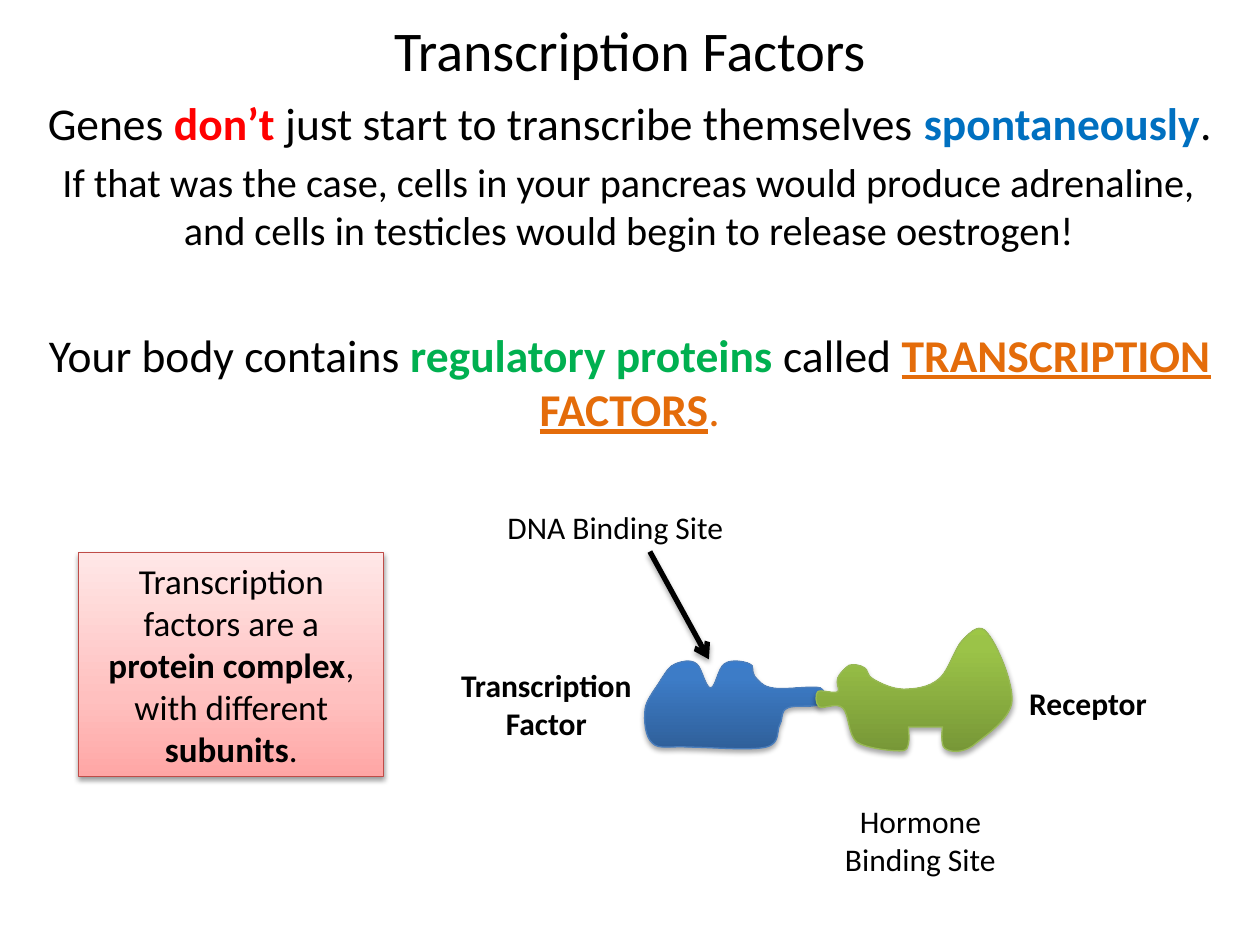
from dataclasses import dataclass
from typing import NamedTuple, Optional

import pptx
import pptx.dml.color
import pptx.enum.shapes
import pptx.enum.text
import pptx.oxml.ns
import pptx.util
from lxml import etree

Cm = pptx.util.Cm
Pt = pptx.util.Pt
qn = pptx.oxml.ns.qn
UNIT = Cm(2.54) // 100


@dataclass(frozen=True)
class Theme:
    font: str = "Calibri"
    ink: str = "000000"
    red: str = "FF0000"
    blue: str = "0070C0"
    green: str = "00B050"
    orange: str = "E46C0A"
    title: int = 32
    lead: int = 26
    detail: int = 23
    note: int = 20
    label: int = 18


THEME = Theme()


class Span(NamedTuple):
    text: str
    color: str = THEME.ink
    bold: Optional[bool] = False
    underline: Optional[bool] = False


class Line(NamedTuple):
    spans: list[Span]
    size: int
    before: float


class Label(NamedTuple):
    text: str
    left: float
    top: float
    height: float
    bold: bool


class Finish(NamedTuple):
    stops: list[tuple[int, str]]
    line: str
    shadow_alpha: int = 35
    shadow_distance: float = 1.8


class Protein(NamedTuple):
    frame: tuple[int, int, int, int]
    start: tuple[int, int]
    segments: list[tuple[int, ...]]
    finish: Finish


BODY = [
    Line([Span("Genes "), Span("don’t", THEME.red, True),
          Span(" just start to transcribe themselves "),
          Span("spontaneously", THEME.blue, True), Span(".")], THEME.lead, 5.2),
    Line([Span("If that was the case, cells in your pancreas would produce adrenaline, "
               "and cells in testicles would begin to release oestrogen!")], THEME.detail, 4.6),
    Line([Span("Your body contains "), Span("regulatory proteins ", THEME.green, True),
          Span("called "), Span("TRANSCRIPTION FACTORS", THEME.orange, True, True),
          Span(".", THEME.orange)], THEME.lead, 41.8),
]
NOTE = [Span("Transcription factors are a "), Span("protein complex", bold=True),
        Span(", with different "), Span("subunits", bold=True), Span(".")]
NOTE_FINISH = Finish([(0, "FFA6A5"), (35, "FFC0BF"), (100, "FFE7E7")], "BF4C48", 38, 1.6)
LABELS = [
    Label("DNA Binding Site", 9.93, 10.11, 1.02, False),
    Label("Receptor", 19.46, 13.67, 1.02, True),
    Label("Transcription Factor", 8.54, 13.3, 1.8, True),
    Label("Hormone Binding Site", 16.08, 16.05, 1.8, False),
]
FACTOR = Protein((511, 523, 147, 73), (651, 546), [
    (645, 544, 622, 548, 613, 546), (605, 545, 602, 540, 599, 537),
    (596, 533, 599, 528, 595, 527), (591, 525, 580, 523, 575, 527),
    (570, 530, 568, 546, 564, 546), (560, 546, 557, 530, 553, 527),
    (548, 523, 541, 525, 536, 527), (531, 529, 529, 533, 525, 539),
    (521, 546, 513, 555, 512, 563), (511, 572, 512, 585, 518, 590),
    (523, 595, 532, 592, 547, 593), (562, 593, 596, 596, 608, 593),
    (620, 590, 616, 580, 619, 575), (622, 569, 619, 565, 625, 562),
    (630, 559, 646, 562, 650, 559), (654, 557, 657, 549, 651, 546),
], Finish([(0, "2F5F99"), (80, "3D7CC7"), (100, "3A7CCB")], "4B7EBC"))
RECEPTOR = Protein((647, 494, 158, 103), (649, 549), [
    (651, 547, 662, 551, 665, 549), (667, 547, 663, 542, 665, 538),
    (666, 535, 671, 530, 674, 528), (678, 527, 683, 528, 686, 530),
    (689, 531, 688, 537, 693, 539), (698, 542, 708, 547, 717, 547),
    (725, 547, 737, 546, 745, 539), (753, 533, 758, 513, 765, 507),
    (771, 501, 778, 494, 784, 503), (791, 511, 805, 543, 803, 558),
    (800, 573, 780, 585, 772, 592), (763, 598, 754, 597, 750, 594),
    (746, 592, 748, 577, 748, 577), (748, 577), (721, 577), (721, 577),
    (721, 580, 722, 587, 721, 590), (720, 593, 721, 596, 714, 596),
    (707, 596, 688, 594, 680, 589), (673, 583, 674, 567, 669, 562),
    (664, 557, 654, 563, 650, 561), (647, 558, 647, 551, 649, 549),
], Finish([(0, "779737"), (80, "9BC348"), (100, "9DC746")], "98B955"))


def rgb(color: str) -> pptx.dml.color.RGBColor:
    return pptx.dml.color.RGBColor.from_string(color)


def write_spans(para, spans: list[Span], size: int) -> None:
    para.alignment = pptx.enum.text.PP_ALIGN.CENTER
    for item in spans:
        span = para.add_run()
        span.text = item.text
        span.font.name = THEME.font
        span.font.size = Pt(size)
        span.font.bold = item.bold
        span.font.underline = item.underline
        span.font.color.rgb = rgb(item.color)


def place(shape, left: float, top: float, width: float, height: float) -> None:
    shape.left, shape.top = Cm(left), Cm(top)
    shape.width, shape.height = Cm(width), Cm(height)


def add_shadow(shape, alpha: int = 35, distance: float = 1.8) -> None:
    effects = etree.SubElement(shape._element.spPr, qn("a:effectLst"))
    shadow = etree.SubElement(effects, qn("a:outerShdw"), blurRad=str(Pt(3.1)),
                              dist=str(Pt(distance)), dir="5400000", rotWithShape="0")
    color = etree.SubElement(shadow, qn("a:srgbClr"), val=THEME.ink)
    etree.SubElement(color, qn("a:alpha"), val=str(alpha * 1000))


def apply_finish(shape, finish: Finish) -> None:
    shape.fill.gradient()
    shape.fill.gradient_angle = 90
    stops = shape._element.spPr.find(".//" + qn("a:gsLst"))
    for stop in list(stops):
        stops.remove(stop)
    for position, color in finish.stops:
        stop = etree.SubElement(stops, qn("a:gs"), pos=str(position * 1000))
        etree.SubElement(stop, qn("a:srgbClr"), val=color)
    shape.line.color.rgb = rgb(finish.line)
    shape.line.width = Pt(0.75)
    add_shadow(shape, finish.shadow_alpha, finish.shadow_distance)


def draw_protein(page, protein: Protein) -> None:
    left, top, width, height = protein.frame
    builder = page.shapes.build_freeform(*protein.start, scale=UNIT)
    builder.add_line_segments([segment[-2:] for segment in protein.segments], close=True)
    shape = builder.convert_to_shape()
    place(shape, *(value * 0.0254 for value in protein.frame))
    outline = shape._element.spPr.find(".//" + qn("a:path"))
    outline.set("w", str(width * UNIT))
    outline.set("h", str(height * UNIT))
    for command, segment in zip(list(outline), [protein.start, *protein.segments]):
        for point in list(command):
            command.remove(point)
        if len(segment) == 6:
            curve = etree.Element(qn("a:cubicBezTo"))
            outline.replace(command, curve)
            command = curve
        for x, y in zip(segment[::2], segment[1::2]):
            etree.SubElement(command, qn("a:pt"), x=str((x - left) * UNIT),
                             y=str((y - top) * UNIT))
    apply_finish(shape, protein.finish)


def draw_body(box) -> None:
    place(box, 0.39, 1.78, 24.61, 16.87)
    box.text_frame.auto_size = pptx.enum.text.MSO_AUTO_SIZE.NONE
    for index, line in enumerate(BODY):
        para = box.text_frame.add_paragraph() if index else box.text_frame.paragraphs[0]
        write_spans(para, line.spans, line.size)
        para.space_before = Pt(line.before)
        properties = para._p.get_or_add_pPr()
        properties.set("marL", "0")
        properties.set("indent", str(-Cm(0.95)))
        etree.SubElement(properties, qn("a:buNone"))


def fit_text(box, spans: list[Span], size: int) -> None:
    box.text_frame.word_wrap = True
    box.text_frame.auto_size = pptx.enum.text.MSO_AUTO_SIZE.SHAPE_TO_FIT_TEXT
    write_spans(box.text_frame.paragraphs[0], spans, size)


def draw_note(page) -> None:
    box = page.shapes.add_shape(pptx.enum.shapes.MSO_SHAPE.RECTANGLE,
                                Cm(1.59), Cm(11.14), Cm(6.15), Cm(4.52))
    apply_finish(box, NOTE_FINISH)
    fit_text(box, NOTE, THEME.note)


def draw_arrow(page) -> None:
    arrow = page.shapes.add_connector(pptx.enum.shapes.MSO_CONNECTOR.STRAIGHT,
                                      Cm(13.1), Cm(11.12), Cm(14.29), Cm(13.29))
    arrow.line.color.rgb = rgb(THEME.ink)
    arrow.line.width = Pt(3)
    etree.SubElement(arrow.line._get_or_add_ln(), qn("a:tailEnd"), type="arrow")
    add_shadow(arrow)


def draw_label(page, label: Label) -> None:
    box = page.shapes.add_textbox(Cm(label.left), Cm(label.top), Cm(4.95), Cm(label.height))
    fit_text(box, [Span(label.text, bold=label.bold)], THEME.label)


def main() -> None:
    deck = pptx.Presentation()
    deck.slide_width, deck.slide_height = Cm(25.4), Cm(19.05)
    page = deck.slides.add_slide(deck.slide_layouts[1])
    title = page.shapes.title
    place(title, 1.27, 0.39, 22.86, 1.19)
    title.text_frame.auto_size = pptx.enum.text.MSO_AUTO_SIZE.NONE
    write_spans(title.text_frame.paragraphs[0], [Span("Transcription Factors")], THEME.title)
    draw_body(page.placeholders[1])
    for protein in (FACTOR, RECEPTOR):
        draw_protein(page, protein)
    draw_note(page)
    draw_arrow(page)
    for label in LABELS:
        draw_label(page, label)
    deck.save("out.pptx")


if __name__ == "__main__":
    main()
